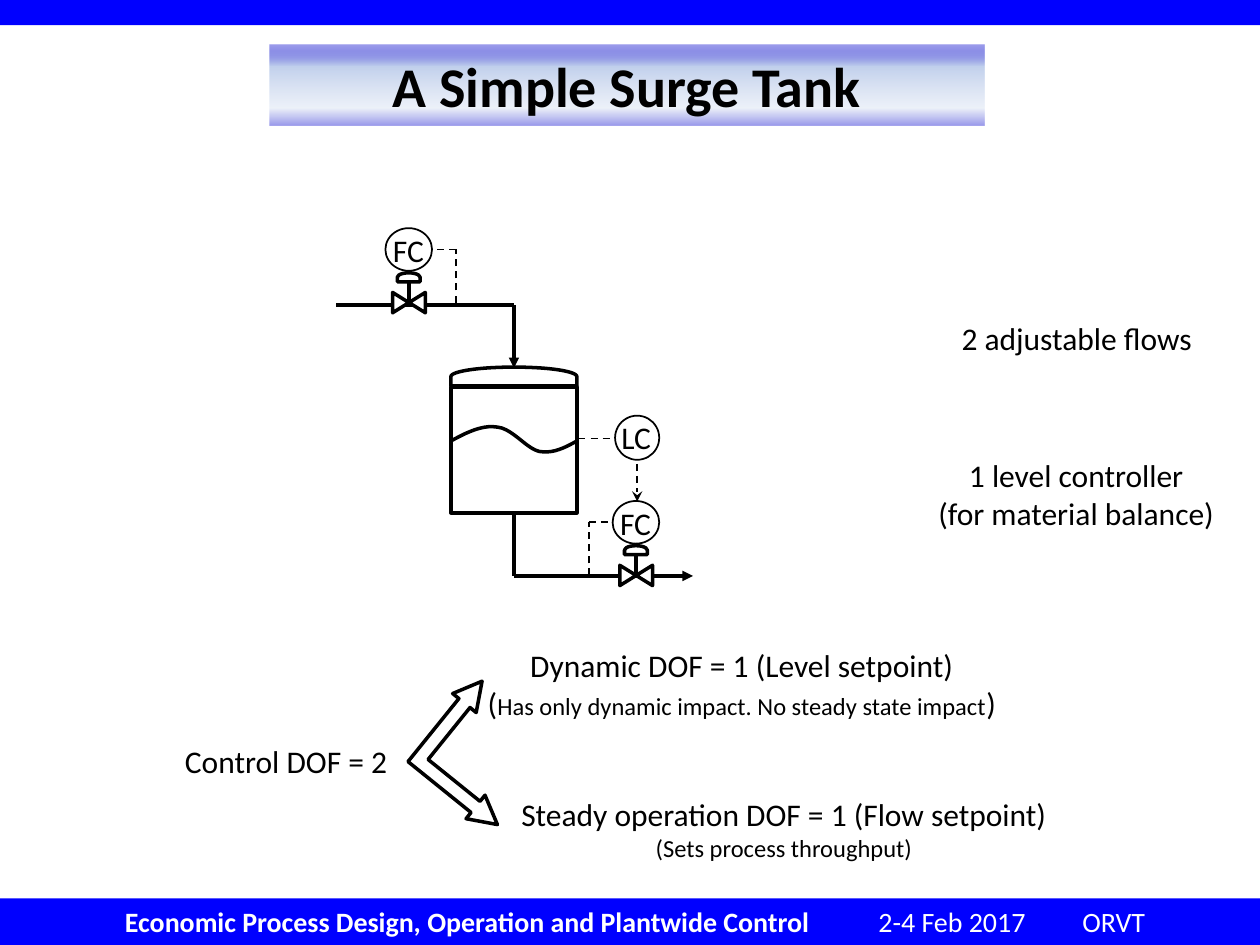
from lxml.etree import SubElement
from pptx import Presentation
from pptx.dml.color import RGBColor
from pptx.enum.dml import MSO_LINE
from pptx.enum.shapes import MSO_CONNECTOR, MSO_SHAPE
from pptx.enum.text import MSO_ANCHOR, PP_ALIGN
from pptx.oxml.ns import qn
from pptx.util import Cm, Pt

BLACK, WHITE, BLUE = "000000", "FFFFFF", "0000FF"
THICK, THIN = 2, 1
LEFT, CENTER = PP_ALIGN.LEFT, PP_ALIGN.CENTER


def color(value):
    return RGBColor.from_string(value)


def set_attributes(target, values):
    for name, value in values.items():
        setattr(target, name, value)


def add_shape(slide, kind, box, fill=None, width=None, rotation=0):
    shape = slide.shapes.add_shape(kind, *map(Cm, box))
    set_attributes(shape, {"rotation": rotation})
    shape.shadow.inherit = False
    style_shape(shape, fill, width)
    return shape


def style_shape(shape, fill, width):
    if fill:
        shape.fill.solid()
        shape.fill.fore_color.rgb = color(fill)
    else:
        shape.fill.background()
    if width:
        shape.line.color.rgb = color(BLACK)
        shape.line.width = Pt(width)
    else:
        shape.line.fill.background()


def add_line(slide, start, end, width=THICK, arrow=None):
    """Thin lines are dashed signals, thick lines are pipes."""
    line = slide.shapes.add_connector(
        MSO_CONNECTOR.STRAIGHT, *map(Cm, (*start, *end)))
    line.line.color.rgb = color(BLACK)
    line.line.width = Pt(width)
    if width == THIN:
        line.line.dash_style = MSO_LINE.DASH
    if arrow:
        SubElement(line.line._get_or_add_ln(), qn("a:tailEnd"), type=arrow)
    SubElement(line._element.spPr, qn("a:effectLst"))


def write(shape, paragraphs, align=CENTER, wrap=False, **frame_values):
    """Each paragraph is a list of (text, size, format values)."""
    frame = shape.text_frame
    set_attributes(frame, {"word_wrap": wrap, **frame_values})
    for index, runs in enumerate(paragraphs):
        paragraph = frame.add_paragraph() if index else frame.paragraphs[0]
        paragraph.alignment = align
        for text, size, values in runs:
            run = paragraph.add_run()
            run.text = text
            ink = values.get("ink", BLACK)
            run.font.color.rgb = color(ink)
            set_attributes(run.font, {"name": "Calibri", "size": Pt(size),
                                      "bold": values.get("bold", False)})


def add_text(slide, box, paragraphs, align=CENTER, **frame_values):
    shape = slide.shapes.add_textbox(*map(Cm, box))
    write(shape, paragraphs, align, **frame_values)


def add_gradient(shape, stops):
    properties = shape._element.spPr
    properties.remove(properties.find(qn("a:noFill")))
    gradient = properties.makeelement(qn("a:gradFill"), {"rotWithShape": "1"})
    properties.find(qn("a:prstGeom")).addnext(gradient)
    stop_list = SubElement(gradient, qn("a:gsLst"))
    for position, value, alpha in stops:
        stop = SubElement(stop_list, qn("a:gs"), pos=str(position * 1000))
        ink = SubElement(stop, qn("a:srgbClr"), val=value)
        SubElement(ink, qn("a:alpha"), val=str(alpha * 1000))
    SubElement(gradient, qn("a:lin"), ang="5400000", scaled="0")


def title_banner(slide, box):
    banner = add_shape(slide, MSO_SHAPE.RECTANGLE, box)
    add_gradient(banner, [(1, "0000CC", 39), (27, "C2D1ED", 100),
                          (78, "D2DDF1", 40), (100, "0000CC", 40)])
    write(banner, [[("A Simple Surge Tank", 32, {"bold": True})]],
          wrap=True, vertical_anchor=MSO_ANCHOR.MIDDLE)


def footer(slide, box):
    left, top, width, height = box
    add_shape(slide, MSO_SHAPE.RECTANGLE, box, BLUE)
    # Each item is wide enough to stay on one line
    items = [(2.52, 15, "Economic Process Design, Operation and Plantwide Control", True),
             (17.71, 4, "2-4 Feb 2017", False),
             (21.82, 3, "ORVT", False)]
    for offset, item_width, text, bold in items:
        add_text(slide, (left + offset, top, item_width, height),
                 [[(text, 16, {"bold": bold, "ink": WHITE})]], LEFT, wrap=True,
                 margin_left=0, margin_right=0, margin_top=0, margin_bottom=0,
                 vertical_anchor=MSO_ANCHOR.MIDDLE)


def bezier(p0, p1, p2, p3, steps=10):
    for step in range(1, steps + 1):
        t = step / steps
        yield tuple((1 - t) ** 3 * a + 3 * (1 - t) ** 2 * t * b
                    + 3 * (1 - t) * t ** 2 * c + t ** 3 * d
                    for a, b, c, d in zip(p0, p1, p2, p3))


def tank(slide, box):
    left, top, width, height = box
    middle = left + width / 2
    add_shape(slide, MSO_SHAPE.RECTANGLE, box, width=THICK)
    # Dome, drawn upright and turned a quarter
    add_shape(slide, MSO_SHAPE.FLOWCHART_DELAY,
              (middle - 0.19, top - 1.48, 0.38, width), width=THICK, rotation=270)
    # Inlet and outlet pipes
    inlet, outlet = top - 1.65, top + height + 1.27
    add_line(slide, (left - 2.31, inlet), (middle, inlet))
    add_line(slide, (middle, inlet), (middle, top - 0.38), arrow="triangle")
    add_line(slide, (middle, top + height), (middle, outlet))
    add_line(slide, (middle, outlet), (left + 4.88, outlet), arrow="triangle")
    # Liquid surface
    controls = [(0, 1.09), (0.33, 0.91), (0.64, 0.76), (0.94, 0.81), (1.24, 0.84),
                (1.52, 1.24), (1.78, 1.3), (2.06, 1.35), (2.31, 1.22), (2.54, 1.09)]
    points = [controls[0]]
    for first in range(0, 9, 3):
        points += bezier(*controls[first:first + 4])
    points = [(Cm(left + x), Cm(top + y)) for x, y in points]
    builder = slide.shapes.build_freeform(*points[0])
    builder.add_line_segments(points[1:], close=False)
    surface = builder.convert_to_shape()
    surface.shadow.inherit = False
    style_shape(surface, None, THICK)


def instrument(slide, box, label):
    """Circle with its label centred in it."""
    left, top, width, height = box
    add_shape(slide, MSO_SHAPE.OVAL, box, width=THIN)
    add_text(slide, (left + width / 2 - 0.57, top - 0.07, 1.14, 1.02),
             [[(label, 18, {})]], LEFT)


def flow_controller(slide, x, y, side):
    """Valve centred on (x, y), sensing the flow on the given side."""
    add_shape(slide, MSO_SHAPE.FLOWCHART_COLLATE, (x - 0.2, y - 0.33, 0.41, 0.66),
              WHITE, THICK, 270)
    add_shape(slide, MSO_SHAPE.FLOWCHART_DELAY, (x - 0.09, y - 0.74, 0.18, 0.46),
              width=THICK, rotation=270)
    add_line(slide, (x, y), (x, y - 0.41))
    instrument(slide, (x - 0.47, y - 1.5, 0.94, 0.86), "FC")
    sensor, signal = x + side * 0.95, y - 1.07
    add_line(slide, (sensor, y), (sensor, signal), THIN)
    add_line(slide, (sensor, signal), (x + side * 0.46, signal), THIN)


def level_controller(slide, box):
    left, top, width, height = box
    middle = left + width / 2
    instrument(slide, box, "LC")
    add_line(slide, (left - 0.74, top + 0.46), (left, top + 0.46), THIN)
    add_line(slide, (middle, top + height + 0.08), (middle, top + 1.73), THIN, "stealth")


def freedom_summary(slide, box):
    left, top = box[:2]
    add_text(slide, (left, top + 1.93, 4.65, 1.02), [[("Control DOF = 2", 18, {})]], LEFT)
    # Forked arrow
    fork = add_shape(slide, MSO_SHAPE.LEFT_UP_ARROW, (left + 5, top + 1.12, 2.36, 2.36),
                     width=THICK, rotation=38.9)
    fork._element.spPr.find(qn("a:xfrm")).set("flipH", "1")
    for index, value in enumerate((0.122, 0.129, 0.24)):
        fork.adjustments[index] = value
    # The two branches
    add_text(slide, (left + 6.05, top, 10.85, 1.8), [
        [("Dynamic DOF = 1 (Level setpoint)", 18, {})],
        [("(", 18, {}), ("Has only dynamic impact. No steady state impact", 14, {}),
         (")", 18, {})]])
    add_text(slide, (left + 6.71, top + 3, 11.23, 1.63), [
        [("Steady operation DOF = 1 (Flow setpoint)", 18, {})],
        [("(Sets process throughput)", 14, {})]])


def main():
    presentation = Presentation()
    set_attributes(presentation, {"slide_width": Cm(25.4), "slide_height": Cm(19.05)})
    slide = presentation.slides.add_slide(presentation.slide_layouts[6])
    add_shape(slide, MSO_SHAPE.RECTANGLE, (0, 0, 25.4, 0.51), BLUE)
    footer(slide, (0, 18.11, 25.4, 0.94))
    title_banner(slide, (5.44, 0.91, 14.4, 1.63))
    # Process diagram
    tank(slide, (9.09, 7.8, 2.54, 2.54))
    flow_controller(slide, 8.24, 6.1, 1)
    flow_controller(slide, 12.82, 11.6, -1)
    level_controller(slide, (12.4, 8.38, 0.89, 0.89))
    # Remarks
    add_text(slide, (19.1, 6.3, 5.21, 1.02), [[("2 adjustable flows", 18, {})]])
    add_text(slide, (18.62, 9.07, 6.15, 2.57), [
        [("1 level controller", 18, {})], [("(for material balance)", 18, {})]])
    freedom_summary(slide, (3.48, 12.9, 17.94, 4.63))
    presentation.save("out.pptx")


if __name__ == "__main__":
    main()
